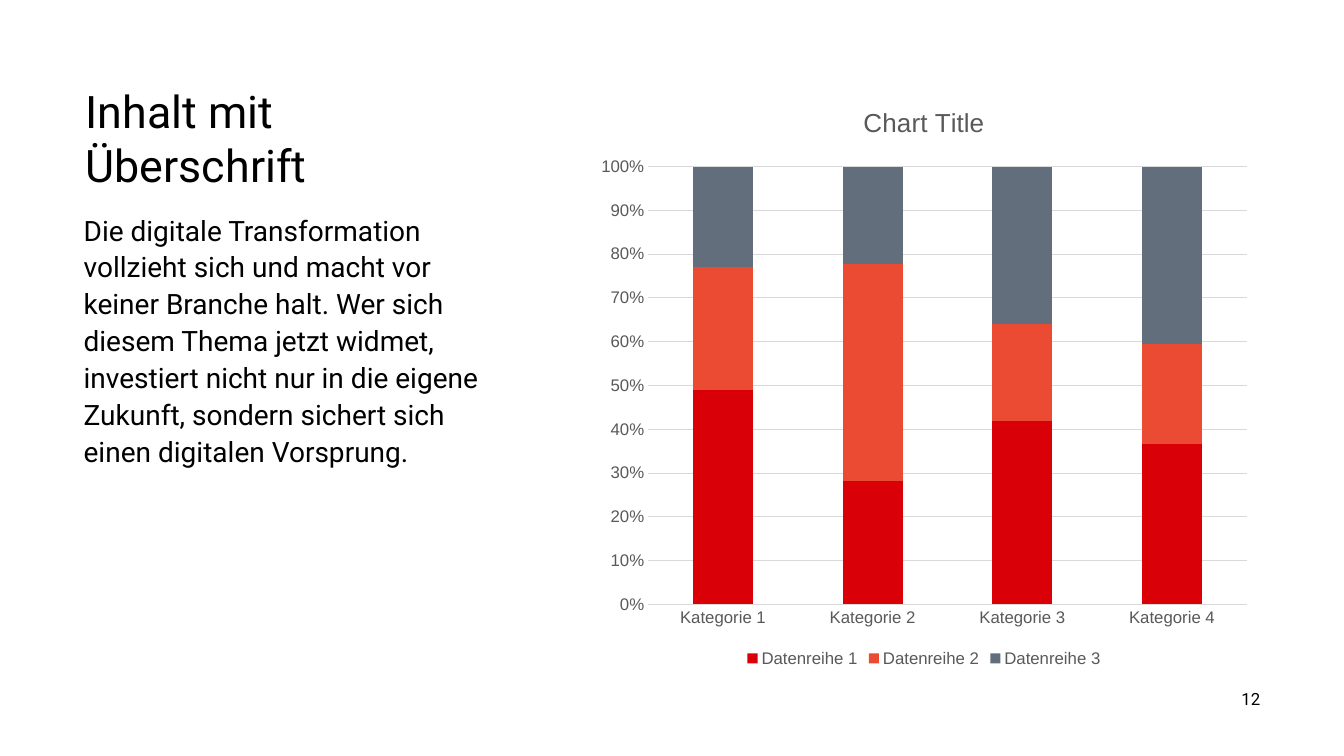
from pptx import Presentation
from pptx.chart.data import CategoryChartData
from pptx.dml.color import RGBColor
from pptx.enum.chart import XL_CHART_TYPE, XL_LEGEND_POSITION, XL_TICK_MARK
from pptx.enum.text import MSO_ANCHOR, PP_ALIGN
from pptx.util import Inches, Pt

STACKED = XL_CHART_TYPE.COLUMN_STACKED_100
BOTTOM = XL_LEGEND_POSITION.BOTTOM
NO_TICK = XL_TICK_MARK.NONE
TOP, MIDDLE = MSO_ANCHOR.TOP, MSO_ANCHOR.MIDDLE
LEFT, RIGHT = PP_ALIGN.LEFT, PP_ALIGN.RIGHT

# Content
TITLE = "Inhalt mit Überschrift"
BODY = ("Die digitale Transformation vollzieht sich und macht vor keiner Branche halt. "
        "Wer sich diesem Thema jetzt widmet, investiert nicht nur in die eigene Zukunft, "
        "sondern sichert sich einen digitalen Vorsprung.")
PAGE = "12"
CHART_TITLE = "Chart Title"
CATEGORIES = ["Kategorie 1", "Kategorie 2", "Kategorie 3", "Kategorie 4"]
SERIES = [
    ("Datenreihe 1", (49, 28, 42, 37), "red"),
    ("Datenreihe 2", (28, 49, 22, 23), "orange"),
    ("Datenreihe 3", (23, 22, 36, 41), "slate"),
]
COLORS = {"red": "DA0007", "orange": "EB4B32", "slate": "626E7C",
          "text": "000000", "label": "595959", "grid": "D9D9D9"}


def rgb(name):
    return RGBColor.from_string(COLORS[name])


def style_font(font, name, size, color):
    font.name = name
    font.size = Pt(size)
    font.bold = False
    font.color.rgb = rgb(color)


def add_text(s, box, text, size, align=LEFT, anchor=TOP, spacing=1.0):
    tf = s.shapes.add_textbox(*map(Inches, box)).text_frame
    tf.word_wrap = True
    tf.margin_left = tf.margin_top = tf.margin_right = tf.margin_bottom = 0
    tf.vertical_anchor = anchor
    p = tf.paragraphs[0]
    p.alignment = align
    p.line_spacing = spacing
    r = p.add_run()
    r.text = text
    style_font(r.font, "Roboto", size, "text")


def add_share_chart(s, box):
    data = CategoryChartData()
    data.categories = CATEGORIES
    for name, values, _ in SERIES:
        data.add_series(name, values)
    chart = s.shapes.add_chart(STACKED, *map(Inches, box), data).chart
    style_font(chart.font, "Arial", 12, "label")

    # Chart title and legend
    chart.has_title = True
    r = chart.chart_title.text_frame.paragraphs[0].add_run()
    r.text = CHART_TITLE
    style_font(r.font, "Arial", 18.6, "label")
    chart.chart_title.include_in_layout = False
    chart.has_legend = True
    chart.legend.position = BOTTOM
    chart.legend.include_in_layout = False
    style_font(chart.legend.font, "Arial", 12, "label")

    # Columns
    plot = chart.plots[0]
    plot.vary_by_categories = False
    plot.gap_width = 150
    plot.overlap = 100
    for series, (_, _, color) in zip(plot.series, SERIES):
        series.format.fill.solid()
        series.format.fill.fore_color.rgb = rgb(color)

    # Axes
    for axis in (chart.category_axis, chart.value_axis):
        axis.major_tick_mark = axis.minor_tick_mark = NO_TICK
        axis.format.line.fill.background()
        style_font(axis.tick_labels.font, "Arial", 12, "label")
    value_axis = chart.value_axis
    value_axis.tick_labels.number_format = "0%"
    value_axis.tick_labels.number_format_is_linked = False
    value_axis.has_major_gridlines = True
    grid = value_axis.major_gridlines.format.line
    grid.color.rgb = rgb("grid")
    grid.width = Pt(0.75)


def main():
    prs = Presentation()
    prs.slide_width, prs.slide_height = Inches(13.33), Inches(7.5)
    s = prs.slides.add_slide(prs.slide_layouts[6])
    add_share_chart(s, (5.83, 0.83, 6.67, 5.83))
    add_text(s, (0.83, 2.08, 4.17, 4.58), BODY, 20, spacing=1.1)
    add_text(s, (0.85, 0.83, 4.1, 1.67), TITLE, 32)
    add_text(s, (10.83, 6.79, 1.67, 0.29), PAGE, 12, RIGHT, MIDDLE)
    prs.save("out.pptx")


if __name__ == "__main__":
    main()
